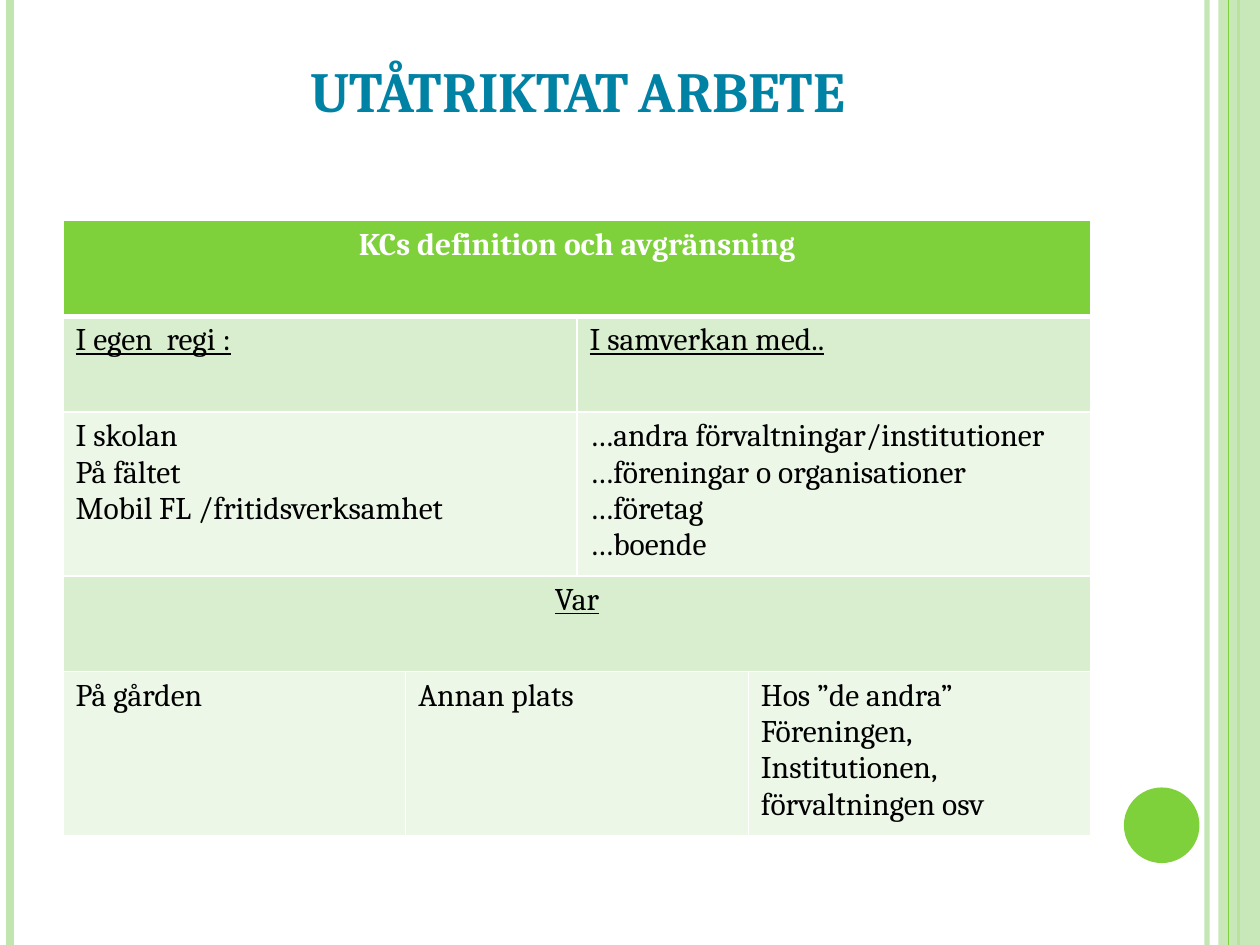
import pptx
import pptx.dml.color
import pptx.enum.shapes
import pptx.enum.text
import pptx.oxml
import pptx.oxml.ns
import pptx.util
from lxml import etree

Inches = pptx.util.Inches
Pt = pptx.util.Pt
RGB = pptx.dml.color.RGBColor.from_string
SHAPE = pptx.enum.shapes.MSO_SHAPE
ALIGN = pptx.enum.text.PP_ALIGN
qn = pptx.oxml.ns.qn

COLORS = {
    "green": "7FD13B", "pale": "C0E5AF", "band": "D8EECE", "light": "ECF7E8",
    "title": "0082A5", "white": "FFFFFF", "black": "000000",
}


def write_text(tf, text, size=18, color="black", bold=False, underline=False,
               align=ALIGN.LEFT):
    """Write one paragraph per line of text and return the last run."""
    tf.word_wrap = True
    for i, line in enumerate(text.split("\n")):
        p = tf.paragraphs[0] if i == 0 else tf.add_paragraph()
        p.alignment = align
        r = p.add_run()
        r.text = line
        r.font.name = "Cambria"
        r.font.size = Pt(size)
        r.font.bold = bold
        r.font.underline = underline
        r.font.color.rgb = RGB(COLORS[color])
    return r


def set_alpha(fill_parent, percent):
    clr = fill_parent.find(".//" + qn("a:srgbClr"))
    etree.SubElement(clr, qn("a:alpha"), val=str(percent * 1000))


prs = pptx.Presentation()
prs.slide_width, prs.slide_height = Inches(10), Inches(7.5)
s = prs.slides.add_slide(prs.slide_layouts[6])

# Side stripes, back to front; the pale panel covers the 9.83 line
stripes = [
    (9.58, "pale", 3, 93),
    (0.08, "pale", 4.5, 100),
    (9.83, "green", 1.5, 100),
    ("panel", "pale", 0, 87),
    (9.75, "green", 0.75, 100),
]
for x, color, width, alpha in stripes:
    if x == "panel":
        sp = s.shapes.add_shape(SHAPE.RECTANGLE, Inches(9.67), 0, Inches(0.33), Inches(7.5))
        sp.shadow.inherit = False
        sp.fill.solid()
        sp.fill.fore_color.rgb = RGB(COLORS[color])
        sp.line.fill.background()
    else:
        sp = s.shapes.add_connector(pptx.enum.shapes.MSO_CONNECTOR.STRAIGHT,
                                    Inches(x), 0, Inches(x), Inches(7.5))
        sp.line.color.rgb = RGB(COLORS[color])
        sp.line.width = Pt(width)
        etree.SubElement(sp._element.spPr, qn("a:effectLst"))
    if alpha < 100:
        set_alpha(sp._element.spPr, alpha)

# Corner circle
sp = s.shapes.add_shape(SHAPE.OVAL, Inches(8.92), Inches(6.25), Inches(0.6), Inches(0.6))
sp.shadow.inherit = False
sp.fill.solid()
sp.fill.fore_color.rgb = RGB(COLORS["green"])
sp.line.fill.background()

# Title
tf = s.shapes.add_textbox(Inches(0.5), Inches(0.3), Inches(8.17), Inches(1.25)).text_frame
tf.margin_top = Inches(0.14)
r = write_text(tf, "UTÅTRIKTAT ARBETE", size=32.4, color="title", bold=True,
               align=ALIGN.CENTER)
r.font._element.set("cap", "small")

# Table grid
col_widths = [2.72, 1.36, 1.36, 2.72]
row_heights = [0.76, 0.76, 1.25, 0.76, 1.25]
table = s.shapes.add_table(len(row_heights), len(col_widths), Inches(0.5), Inches(1.75),
                           Inches(sum(col_widths)), Inches(sum(row_heights))).table
for col, width in zip(table.columns, col_widths):
    col.width = Inches(width)
for row, height in zip(table.rows, row_heights):
    row.height = Inches(height)

# Row fills and white borders, heavier below the header
row_fills = ["green", "band", "light", "band", "light"]
for i, fill in enumerate(row_fills):
    for cell in table.rows[i].cells:
        cell.fill.solid()
        cell.fill.fore_color.rgb = RGB(COLORS[fill])
        tcPr = cell._tc.get_or_add_tcPr()
        for n, side in enumerate("LRTB"):
            heavy = (i, side) in [(0, "B"), (1, "T")]
            ln = etree.Element(qn("a:ln" + side), w=str(Pt(3 if heavy else 1)))
            solid = etree.SubElement(ln, qn("a:solidFill"))
            etree.SubElement(solid, qn("a:srgbClr"), val=COLORS["white"])
            tcPr.insert(n, ln)

# Cell texts: row, first column, last column, text, format
heading = {"underline": True}
cells = [
    (0, 0, 3, "KCs definition och avgränsning",
     {"color": "white", "bold": True, "align": ALIGN.CENTER}),
    (1, 0, 1, "I egen  regi :", heading),
    (1, 2, 3, "I samverkan med..", heading),
    (2, 0, 1, "I skolan\nPå fältet\nMobil FL /fritidsverksamhet", {}),
    (2, 2, 3, "…andra förvaltningar/institutioner\n…föreningar o organisationer\n"
              "…företag\n…boende", {}),
    (3, 0, 3, "Var", {"underline": True, "align": ALIGN.CENTER}),
    (4, 0, 0, "På gården", {}),
    (4, 1, 2, "Annan plats", {}),
    (4, 3, 3, "Hos ”de andra”\nFöreningen,\nInstitutionen,\nförvaltningen osv", {}),
]
for row, first, last, text, style in cells:
    cell = table.cell(row, first)
    if last > first:
        cell.merge(table.cell(row, last))
    write_text(cell.text_frame, text, **style)

prs.save("out.pptx")
